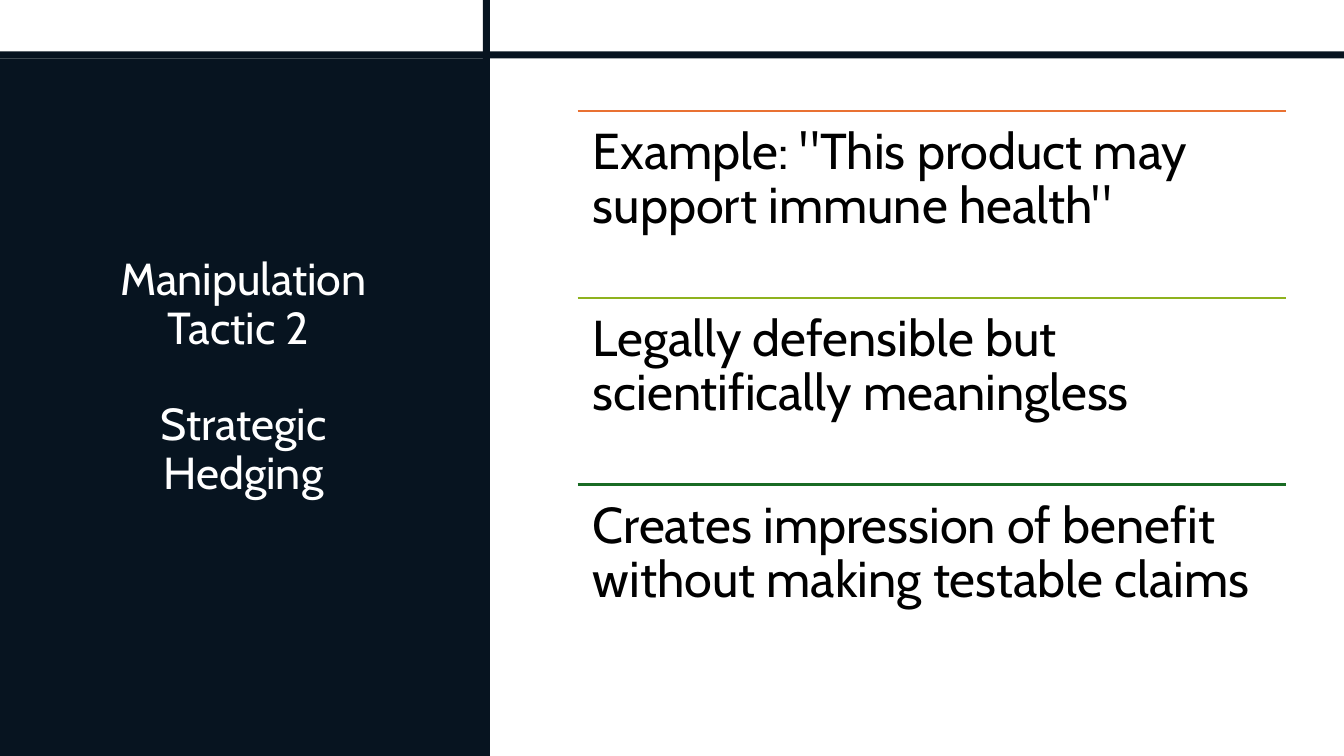
import pptx
import pptx.dml.color
import pptx.enum.shapes
import pptx.enum.text
import pptx.util
from pptx.util import Inches
from lxml import etree

COLORS = {
    "navy": "071420",
    "white": "FFFFFF",
    "black": "000000",
    "orange": "E97132",
    "lime": "8EB21E",
    "green": "196B24",
}
FONT = "Cabin"
SLIDE_WIDTH, SLIDE_HEIGHT = 13.33, 7.5
BAR = 0.07
TITLE_LINES = ["Manipulation Tactic 2 ", "Strategic Hedging"]
POINTS = [
    ("orange", 'Example: "This product may support immune health"'),
    ("lime", "Legally defensible but scientifically meaningless"),
    ("green", "Creates impression of benefit without making testable claims"),
]


def rgb(name):
    return pptx.dml.color.RGBColor.from_string(COLORS[name])


def add_block(slide, left, top, width, height):
    block = slide.shapes.add_shape(
        pptx.enum.shapes.MSO_SHAPE.RECTANGLE,
        Inches(left), Inches(top), Inches(width), Inches(height))
    block.shadow.inherit = False
    block.fill.solid()
    block.fill.fore_color.rgb = rgb("navy")
    block.line.fill.background()


def add_text(slide, left, top, width, height, lines, size, color, inset=None):
    """Add a wrapping text box with one paragraph per line; return its frame."""
    box = slide.shapes.add_textbox(
        Inches(left), Inches(top), Inches(width), Inches(height))
    frame = box.text_frame
    frame.word_wrap = True
    if inset is not None:
        frame.margin_left = frame.margin_right = Inches(inset)
        frame.margin_top = frame.margin_bottom = Inches(inset)
    for index, line in enumerate(lines):
        paragraph = frame.paragraphs[0] if index == 0 else frame.add_paragraph()
        paragraph.line_spacing = 0.9
        run = paragraph.add_run()
        run.text = line
        run.font.name = FONT
        run.font.size = pptx.util.Pt(size)
        run.font.color.rgb = rgb(color)
    return frame


def add_rule(slide, left, top, width, color):
    rule = slide.shapes.add_connector(
        pptx.enum.shapes.MSO_CONNECTOR.STRAIGHT,
        Inches(left), Inches(top), Inches(left + width), Inches(top))
    rule.line.color.rgb = rgb(color)
    rule.line.width = pptx.util.Pt(1.5)
    etree.SubElement(rule._element.spPr, pptx.oxml.ns.qn("a:effectLst"))


def add_title_panel(slide, left, top, width, height):
    add_block(slide, left, top, width, height)
    frame = add_text(slide, left + 0.66, top + 0.26, 3.51, height - 1.1,
                     TITLE_LINES, 32, "white")
    frame.vertical_anchor = pptx.enum.text.MSO_ANCHOR.MIDDLE
    for paragraph in frame.paragraphs:
        paragraph.alignment = pptx.enum.text.PP_ALIGN.CENTER
    frame.paragraphs[-1].space_before = pptx.util.Pt(34.5)


def add_cross_bars(slide, panel_right, panel_top):
    """Add full-length bars along the panel's right and top edges."""
    add_block(slide, panel_right - BAR, 0, BAR, SLIDE_HEIGHT)
    add_block(slide, 0, panel_top - BAR, SLIDE_WIDTH, BAR)


def add_points(slide, left, top, width, height):
    row_height = height / len(POINTS)
    for index, (color, text) in enumerate(POINTS):
        row_top = top + index * row_height
        add_rule(slide, left, row_top, width, color)
        add_text(slide, left, row_top, width, row_height,
                 [text], 36, "black", inset=0.15)


def main():
    presentation = pptx.Presentation()
    presentation.slide_width = Inches(SLIDE_WIDTH)
    presentation.slide_height = Inches(SLIDE_HEIGHT)
    slide = presentation.slides.add_slide(presentation.slide_layouts[6])
    add_title_panel(slide, 0, 0.58, 4.86, 6.92)
    add_cross_bars(slide, 4.86, 0.58)
    add_points(slide, 5.73, 1.1, 7.02, 5.56)
    presentation.save("out.pptx")


if __name__ == "__main__":
    main()
